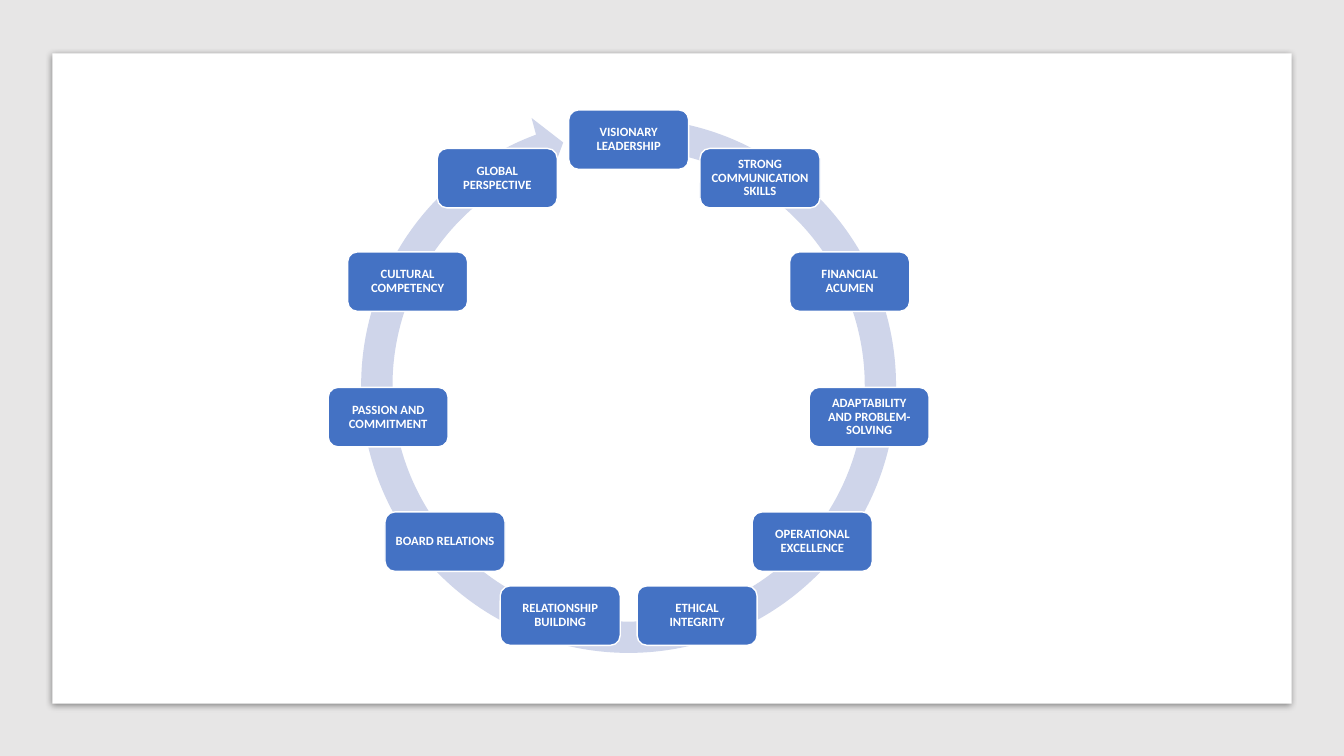
from dataclasses import dataclass
from math import cos, pi, sin

from lxml import etree
from pptx import Presentation
from pptx.dml.color import RGBColor
from pptx.enum.shapes import MSO_SHAPE
from pptx.enum.text import MSO_ANCHOR, PP_ALIGN
from pptx.oxml.ns import qn
from pptx.util import Inches, Pt

RECTANGLE = MSO_SHAPE.RECTANGLE
ROUNDED = MSO_SHAPE.ROUNDED_RECTANGLE
CIRCULAR_ARROW = MSO_SHAPE.CIRCULAR_ARROW
CENTER = PP_ALIGN.CENTER
MIDDLE = MSO_ANCHOR.MIDDLE

QUALITIES = [
    "VISIONARY LEADERSHIP",
    "STRONG COMMUNICATION SKILLS",
    "FINANCIAL ACUMEN",
    "ADAPTABILITY AND PROBLEM-SOLVING",
    "OPERATIONAL EXCELLENCE",
    "ETHICAL INTEGRITY",
    "RELATIONSHIP BUILDING",
    "BOARD RELATIONS",
    "PASSION AND COMMITMENT",
    "CULTURAL COMPETENCY",
    "GLOBAL PERSPECTIVE",
]


@dataclass(frozen=True)
class Theme:
    backdrop: str = "E7E6E6"
    white: str = "FFFFFF"
    ring: str = "CFD5EA"
    card: str = "4472C4"
    shadow: str = "000000"
    font: str = "Calibri"
    label_size: int = 9


THEME = Theme()
PAGE_WIDTH, PAGE_HEIGHT = 13.33, 7.5
PANEL = (0.52, 0.53, 12.29, 6.45)
CENTER_X, CENTER_Y, RADIUS = 6.235, 3.795, 2.41
CARD_WIDTH, CARD_HEIGHT, CARD_INSET = 1.19, 0.59, 0.07
ARROW_SIZE, ARROW_TOP = 5.65, 1
# band width, head angle, end angle, start angle, head width
ARROW_SHAPE = (0.055, 3.307, 149.659, 166.963, 0.058)


def add_block(page, kind, area, color):
    block = page.shapes.add_shape(kind, *(Inches(length) for length in area))
    block.shadow.inherit = False
    block.fill.solid()
    block.fill.fore_color.rgb = RGBColor.from_string(color)
    block.line.fill.background()
    return block


def add_soft_shadow(block, blur, distance, opacity):
    """Drop a shadow straight down; lengths in points, opacity in percent."""
    effects = block._element.spPr.find(qn("a:effectLst"))
    shadow = etree.SubElement(effects, qn("a:outerShdw"), blurRad=str(Pt(blur)),
                              dist=str(Pt(distance)), dir=str(90 * 60000))
    color = etree.SubElement(shadow, qn("a:srgbClr"), val=THEME.shadow)
    etree.SubElement(color, qn("a:alpha"), val=str(opacity * 1000))


def add_card(page, label, center_x, center_y):
    area = (center_x - CARD_WIDTH / 2, center_y - CARD_HEIGHT / 2,
            CARD_WIDTH, CARD_HEIGHT)
    card = add_block(page, ROUNDED, area, THEME.card)
    card.line.color.rgb = RGBColor.from_string(THEME.white)
    card.line.width = Pt(1)
    frame = card.text_frame
    frame.word_wrap = True
    frame.vertical_anchor = MIDDLE
    frame.margin_left = frame.margin_right = Inches(CARD_INSET)
    frame.margin_top = frame.margin_bottom = Inches(CARD_INSET)
    para = frame.paragraphs[0]
    para.text = label
    para.alignment = CENTER
    para.line_spacing = 0.9
    para.font.name = THEME.font
    para.font.size = Pt(THEME.label_size)
    para.font.bold = True
    para.font.color.rgb = RGBColor.from_string(THEME.white)


def main():
    deck = Presentation()
    deck.slide_width, deck.slide_height = Inches(PAGE_WIDTH), Inches(PAGE_HEIGHT)
    page = deck.slides.add_slide(deck.slide_layouts[6])

    add_block(page, RECTANGLE, (0, 0, PAGE_WIDTH, PAGE_HEIGHT), THEME.backdrop)
    panel = add_block(page, RECTANGLE, PANEL, THEME.white)
    add_soft_shadow(panel, blur=5, distance=1.4, opacity=43)

    arrow_area = (CENTER_X - ARROW_SIZE / 2, ARROW_TOP, ARROW_SIZE, ARROW_SIZE)
    arrow = add_block(page, CIRCULAR_ARROW, arrow_area, THEME.ring)
    for index, value in enumerate(ARROW_SHAPE):
        arrow.adjustments[index] = value

    for index, label in enumerate(QUALITIES):
        angle = 2 * pi * index / len(QUALITIES)
        add_card(page, label, CENTER_X + RADIUS * sin(angle),
                 CENTER_Y - RADIUS * cos(angle))

    deck.save("out.pptx")


if __name__ == "__main__":
    main()
